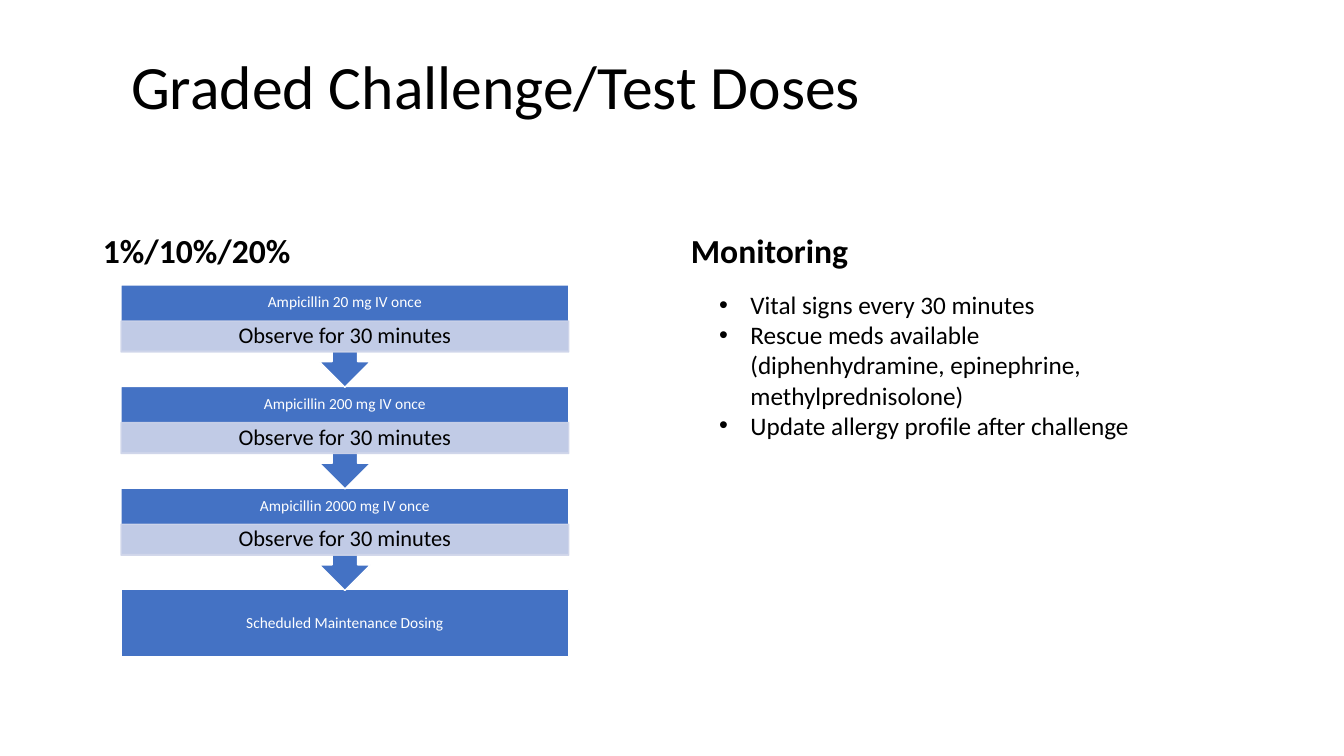
from pptx import Presentation, util as u
from pptx.dml.color import RGBColor
from pptx.enum import shapes, text
from pptx.oxml import ns, xmlchemy as xml

BLACK = RGBColor(0x00, 0x00, 0x00)
WHITE = RGBColor(0xFF, 0xFF, 0xFF)
BLUE = RGBColor(0x44, 0x72, 0xC4)
PALE = RGBColor(0xCF, 0xD5, 0xEA)

LEFT, TOP, WIDTH = 3.05, 7.18, 11.28
STEP, CALL, BOX = 2.56, 2.58, 1.68  # pitch, callout height, box height
DOSE, WAIT = 0.91, 0.78  # heights of the two bands in a callout

DOSES = ["20", "200", "2000"]
CHECKS = [
    "Vital signs every 30 minutes",
    "Rescue meds available (diphenhydramine, epinephrine, methylprednisolone)",
    "Update allergy profile after challenge",
]


def apply(item, values):
    for name, value in values.items():
        setattr(item, name, value)


class Deck:
    font = "Calibri"

    def __init__(self):
        self.file = Presentation()
        apply(self.file, {"slide_width": u.Inches(13.33), "slide_height": u.Inches(7.5)})
        self.slide = self.file.slides.add_slide(self.file.slide_layouts[4])
        self.slots = {s.placeholder_format.idx: s for s in self.slide.placeholders}

    def label(self, shape, lines, size, color, frame, para, bold=False):
        body = shape.text_frame
        apply(body, {"word_wrap": True, "auto_size": text.MSO_AUTO_SIZE.NONE, **frame})
        body.text = "\n".join(lines)
        for item in body.paragraphs:
            apply(item, para)
            for run in item.runs:
                apply(run.font, {"name": self.font, "size": u.Pt(size), "bold": bold})
                run.font.color.rgb = color

    def fill_slot(self, idx, area, lines, size, anchor, para, bold=False):
        slot = self.slots.pop(idx)
        apply(slot, dict(zip(("left", "top", "width", "height"), map(u.Cm, area))))
        para = {"alignment": text.PP_ALIGN.LEFT, **para}
        self.label(slot, lines, size, BLACK, {"vertical_anchor": anchor}, para, bold)
        return slot

    def bullets(self, idx, area, lines, size):
        para = {"level": 1, "line_spacing": 1.0, "space_before": u.Pt(0)}
        slot = self.fill_slot(idx, area, lines, size, text.MSO_ANCHOR.TOP, para)
        for item in slot.text_frame.paragraphs:
            props = item._p.get_or_add_pPr()
            props.set("marL", str(u.Cm(2.06)))
            props.set("indent", str(u.Cm(-0.79)))
            for tag, key, value in (("buFont", "typeface", "Arial"), ("buChar", "char", "•")):
                mark = xml.OxmlElement("a:" + tag)
                mark.set(key, value)
                props.append(mark)

    def block(self, kind, top, height, words, size, color, fill, line, pads, alpha=None):
        """Add a filled shape in the flow column; pads are side, top and bottom."""
        area = map(u.Cm, (LEFT, top, WIDTH, height))
        shape = self.slide.shapes.add_shape(kind, *area)
        shape.shadow.inherit = False
        shape.fill.solid()
        shape.fill.fore_color.rgb = fill
        shape.line.color.rgb = line
        shape.line.width = u.Pt(1)
        if alpha:
            for tint in shape._element.spPr.iter(ns.qn("a:srgbClr")):
                node = xml.OxmlElement("a:alpha")
                node.set("val", str(alpha * 1000))
                tint.append(node)
        side, above, below = map(u.Cm, pads)
        frame = {"margin_left": side, "margin_right": side, "margin_top": above,
                 "margin_bottom": below, "vertical_anchor": text.MSO_ANCHOR.MIDDLE}
        para = {"alignment": text.PP_ALIGN.CENTER, "line_spacing": 0.9}
        self.label(shape, [words], size, color, frame, para)

    def step(self, top, dose):
        """Add one dose callout with its waiting band."""
        kinds = shapes.MSO_SHAPE
        self.block(kinds.DOWN_ARROW_CALLOUT, top, CALL, f"Ampicillin {dose} mg IV once",
                   11, WHITE, BLUE, WHITE, (0.23, 0.23, 0.23 + BOX - DOSE))
        self.block(kinds.RECTANGLE, top + DOSE, WAIT, "Observe for 30 minutes",
                   16, BLACK, PALE, PALE, (0.3, 0.05, 0.05), alpha=90)

    def save(self):
        for slot in self.slots.values():
            slot._element.getparent().remove(slot._element)
        self.file.save("out.pptx")


def main():
    deck = Deck()
    anchor = text.MSO_ANCHOR
    deck.fill_slot(0, (3.05, 0.23, 27.94, 4.04), ["Graded Challenge/Test Doses"], 44,
                   anchor.MIDDLE, {"line_spacing": 0.9})
    heads = ((1, 2.34, 14.33, "1%/10%/20%"), (3, 17.15, 14.4, "Monitoring"))
    for idx, left, width, words in heads:
        deck.fill_slot(idx, (left, 4.67, width, 2.29), [words], 24, anchor.BOTTOM,
                       {"line_spacing": 0.9, "space_before": u.Pt(10)}, bold=True)
    deck.block(shapes.MSO_SHAPE.RECTANGLE, TOP + len(DOSES) * STEP, BOX,
               "Scheduled Maintenance Dosing", 11, WHITE, BLUE, WHITE, (0.23, 0.23, 0.23))
    for row, dose in reversed(list(enumerate(DOSES))):
        deck.step(TOP + row * STEP, dose)
    deck.bullets(4, (16.59, 7.16, 13.08, 4.11), CHECKS, 18)
    deck.save()


if __name__ == "__main__":
    main()
